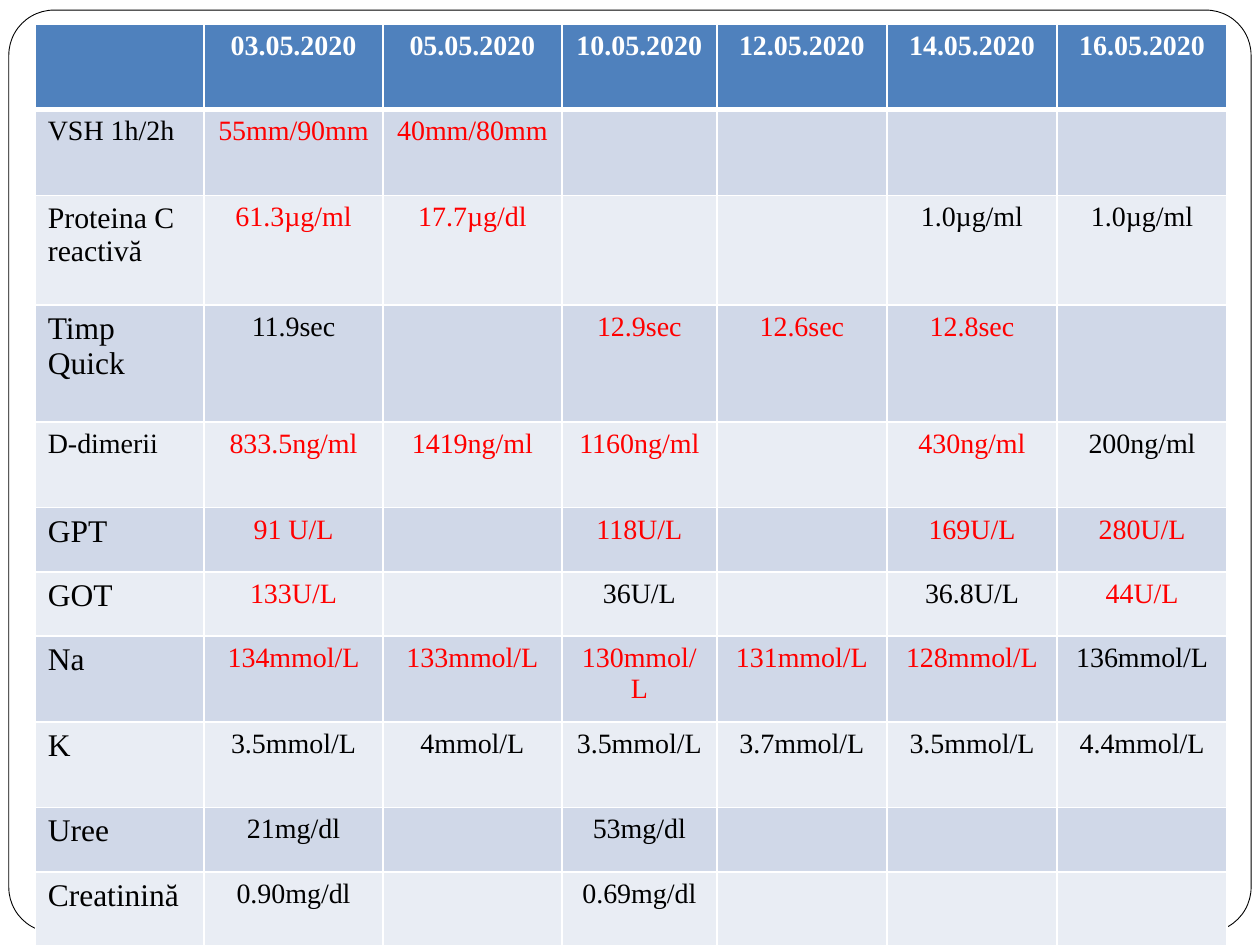
from lxml.etree import SubElement
from pptx import Presentation
from pptx.dml.color import RGBColor
from pptx.enum.shapes import MSO_SHAPE
from pptx.enum.text import PP_ALIGN
from pptx.oxml.ns import qn
from pptx.util import Inches, Pt

# Content: a leading * marks an abnormal value, shown in red
DATES = ["03.05.2020", "05.05.2020", "10.05.2020", "12.05.2020", "14.05.2020", "16.05.2020"]
# (test, label size, row height, values by date)
TESTS = [
    ("VSH 1h/2h", 16, 0.68, ["*55mm/90mm", "*40mm/80mm", "", "", "", ""]),
    ("Proteina C reactivă", 17, 0.87, ["*61.3µg/ml", "*17.7µg/dl", "", "", "1.0µg/ml", "1.0µg/ml"]),
    ("Timp Quick", 18, 0.93, ["11.9sec", "", "*12.9sec", "*12.6sec", "*12.8sec", ""]),
    ("D-dimerii", 16, 0.68,
     ["*833.5ng/ml", "*1419ng/ml", "*1160ng/ml", "", "*430ng/ml", "200ng/ml"]),
    ("GPT", 18, 0.51, ["*91 U/L", "", "*118U/L", "", "*169U/L", "*280U/L"]),
    ("GOT", 18, 0.51, ["*133U/L", "", "36U/L", "", "36.8U/L", "*44U/L"]),
    ("Na", 18, 0.68,
     ["*134mmol/L", "*133mmol/L", "*130mmol/L", "*131mmol/L", "*128mmol/L", "136mmol/L"]),
    ("K", 18, 0.68,
     ["3.5mmol/L", "4mmol/L", "3.5mmol/L", "3.7mmol/L", "3.5mmol/L", "4.4mmol/L"]),
    ("Uree", 18, 0.51, ["21mg/dl", "", "53mg/dl", "", "", ""]),
    ("Creatinină", 18, 0.6, ["0.90mg/dl", "", "0.69mg/dl", "", "", ""]),
]
COL_WIDTHS = [1.34, 1.42, 1.42, 1.23, 1.35, 1.35, 1.35]
HEADER_HEIGHT = 0.68
FONT = "Times New Roman"
WHITE, BLACK, RED = "FFFFFF", "000000", "FF0000"
HEADER_FILL, BANDS = "4F81BD", ["E9EDF4", "D0D8E8"]


def rgb(hex_color):
    return RGBColor.from_string(hex_color)


def set_borders(cell, top, bottom):
    tc_pr = cell._tc.get_or_add_tcPr()
    for side, width in (("L", 1), ("R", 1), ("T", top), ("B", bottom)):
        ln = SubElement(tc_pr, qn(f"a:ln{side}"), w=str(Pt(width)))
        fill = SubElement(ln, qn("a:solidFill"))
        SubElement(fill, qn("a:srgbClr"), val=WHITE)


def set_text(cell, text, size, color, bold, align):
    p = cell.text_frame.paragraphs[0]
    p.alignment = align
    r = p.add_run()
    r.text = text
    r.font.name, r.font.size, r.font.bold = FONT, Pt(size), bold
    r.font.color.rgb = rgb(color)


prs = Presentation()
prs.slide_width, prs.slide_height = Inches(10), Inches(7.5)
s = prs.slides.add_slide(prs.slide_layouts[6])

# Rounded frame
frame = s.shapes.add_shape(MSO_SHAPE.ROUNDED_RECTANGLE,
                           Inches(0.07), Inches(0.08), Inches(9.86), Inches(7.32))
frame.adjustments[0] = 0.049
frame.shadow.inherit = False
frame.fill.solid()
frame.fill.fore_color.rgb = rgb(WHITE)
frame.line.color.rgb = rgb(BLACK)
frame.line.width = Pt(0.5)

# Results table
heights = [HEADER_HEIGHT] + [height for _, _, height, _ in TESTS]
rows = [[""] + DATES] + [[name] + values for name, _, _, values in TESTS]
table = s.shapes.add_table(len(rows), len(COL_WIDTHS), Inches(0.28), Inches(0.19),
                           Inches(sum(COL_WIDTHS)), Inches(sum(heights))).table
for col, width in zip(table.columns, COL_WIDTHS):
    col.width = Inches(width)
for row, height in zip(table.rows, heights):
    row.height = Inches(height)

for i, row in enumerate(rows):
    header = i == 0
    for j, text in enumerate(row):
        cell = table.cell(i, j)
        set_borders(cell, top=3 if i == 1 else 1, bottom=3 if header else 1)
        cell.fill.solid()
        cell.fill.fore_color.rgb = rgb(HEADER_FILL if header else BANDS[i % 2])
        if not text:
            continue
        color = WHITE if header else RED if text.startswith("*") else BLACK
        size = TESTS[i - 1][1] if j == 0 else 16
        align = PP_ALIGN.LEFT if j == 0 else PP_ALIGN.CENTER
        set_text(cell, text.lstrip("*"), size, color, header, align)

prs.save("out.pptx")
